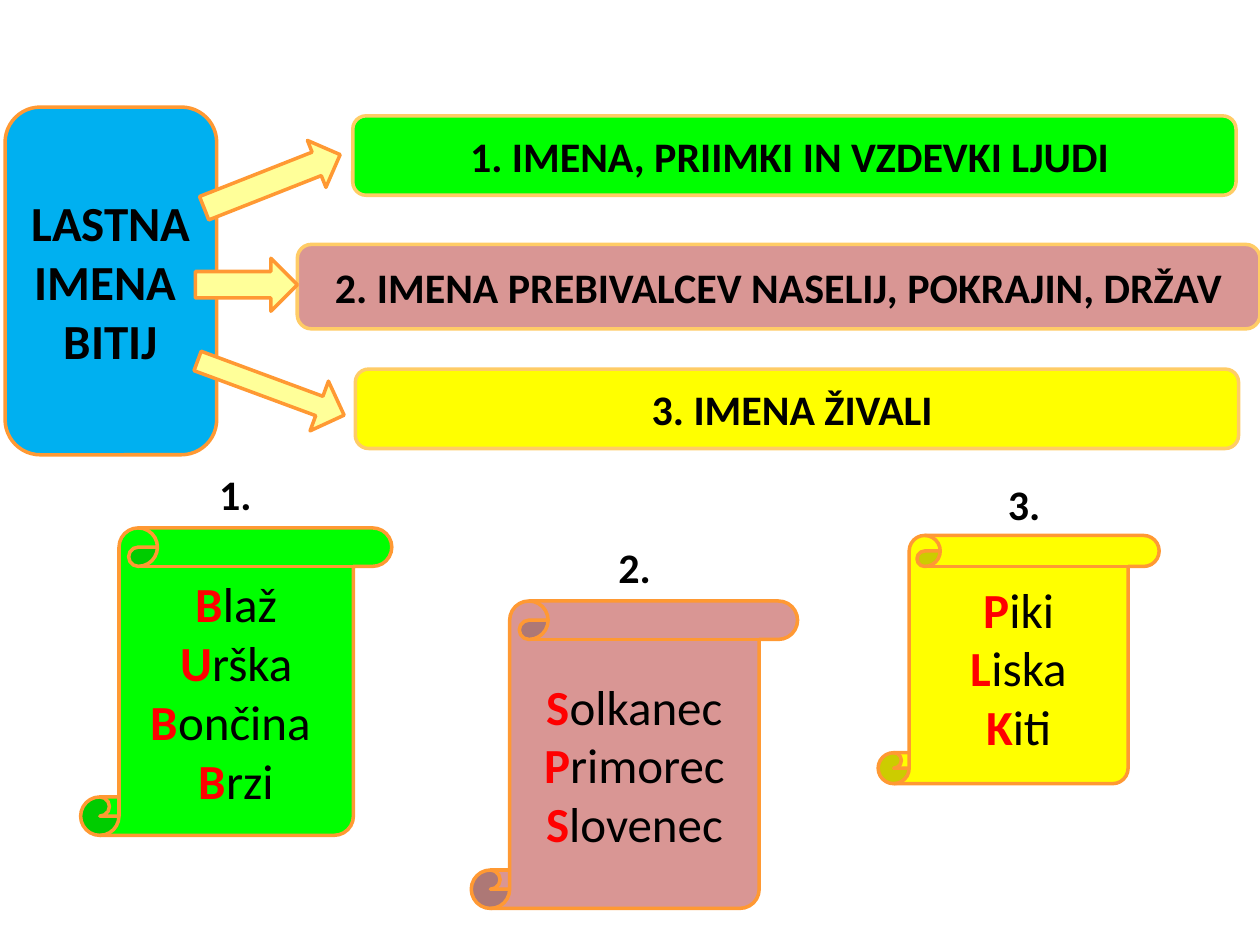
from pptx import Presentation
from pptx.dml.color import RGBColor
from pptx.enum.shapes import MSO_SHAPE
from pptx.enum.text import MSO_ANCHOR, PP_ALIGN
from pptx.util import Emu, Pt

PX = 9144
BLACK = RGBColor(0x00, 0x00, 0x00)
RED = RGBColor(0xFF, 0x00, 0x00)
BLUE = RGBColor(0x00, 0xB0, 0xF0)
GREEN = RGBColor(0x00, 0xFF, 0x00)
ROSE = RGBColor(0xD9, 0x96, 0x94)
YELLOW = RGBColor(0xFF, 0xFF, 0x00)
CREAM = RGBColor(0xFF, 0xFF, 0x99)
ORANGE = RGBColor(0xFF, 0x99, 0x33)
GOLD = RGBColor(0xFF, 0xCC, 0x66)


def write(para, text, size=28, color=BLACK, bold=True, align=PP_ALIGN.CENTER):
    para.alignment = align
    run = para.add_run()
    run.text = text
    font = run.font
    font.name, font.size, font.bold = "Calibri", Pt(size), bold
    font.color.rgb = color


class Deck:
    """Draws styled elements on the current slide."""

    def __init__(self, wide, high):
        self.file = Presentation()
        self.file.slide_width, self.file.slide_height = Emu(wide * PX), Emu(high * PX)
        self.slide = self.file.slides.add_slide(self.file.slide_layouts[6])

    def shape(self, kind, box, fill, line=ORANGE):
        shape = self.slide.shapes.add_shape(kind, *(Emu(n * PX) for n in box))
        shape.shadow.inherit = False
        shape.fill.solid()
        shape.fill.fore_color.rgb = fill
        shape.line.color.rgb = line
        shape.line.width = Pt(2)
        return shape

    def paras(self, shape, count):
        frame = shape.text_frame
        frame.word_wrap = True
        frame.vertical_anchor = MSO_ANCHOR.MIDDLE
        for _ in range(count - 1):
            frame.add_paragraph()
        return frame.paragraphs

    def panel(self, box, lines, fill, line=ORANGE, size=28):
        shape = self.shape(MSO_SHAPE.ROUNDED_RECTANGLE, box, fill, line)
        for para, text in zip(self.paras(shape, len(lines)), lines):
            write(para, text, size=size)

    def scroll(self, box, names, fill):
        shape = self.shape(MSO_SHAPE.VERTICAL_SCROLL, box, fill)
        for para, name in zip(self.paras(shape, len(names)), names):
            write(para, name[0], color=RED)
            write(para, name[1:], bold=False)

    def arrow(self, box, turn=0, shaft=0.5):
        shape = self.shape(MSO_SHAPE.RIGHT_ARROW, box, CREAM)
        shape.adjustments[0] = shaft
        shape.rotation = turn

    def label(self, left, top, text):
        box = self.slide.shapes.add_textbox(*(Emu(n * PX) for n in (left, top, 47, 50)))
        box.text_frame.word_wrap = False
        write(box.text_frame.paragraphs[0], text, size=24, align=PP_ALIGN.LEFT)


def main():
    deck = Deck(1000, 750)
    deck.panel((4, 85, 168, 276), ["LASTNA IMENA ", "BITIJ"], BLUE)
    for box, text, fill in (
        ((280, 92, 701, 63), "1. IMENA, PRIIMKI IN VZDEVKI LJUDI ", GREEN),
        ((236, 194, 764, 67), "2. IMENA PREBIVALCEV NASELIJ, POKRAJIN, DRŽAV", ROSE),
        ((282, 293, 701, 63), "3. IMENA ŽIVALI ", YELLOW),
    ):
        deck.panel(box, [text], fill, line=GOLD, size=24)

    deck.scroll((374, 477, 259, 244), ["Solkanec", "Primorec", "Slovenec"], ROSE)
    deck.scroll((64, 419, 247, 244), ["Blaž", "Urška", "Bončina ", "Brzi"], GREEN)
    deck.scroll((697, 425, 223, 197), ["Piki", "Liska", "Kiti"], YELLOW)

    deck.arrow((158, 124, 116, 40), turn=338.5)
    deck.arrow((155, 205, 81, 42))
    deck.arrow((153, 287, 124, 42), turn=20.3, shaft=0.39)

    for num, (left, top) in enumerate(((164, 367), (481, 425), (790, 375)), 1):
        deck.label(left, top, f"{num}.")
    deck.file.save("out.pptx")


if __name__ == "__main__":
    main()
